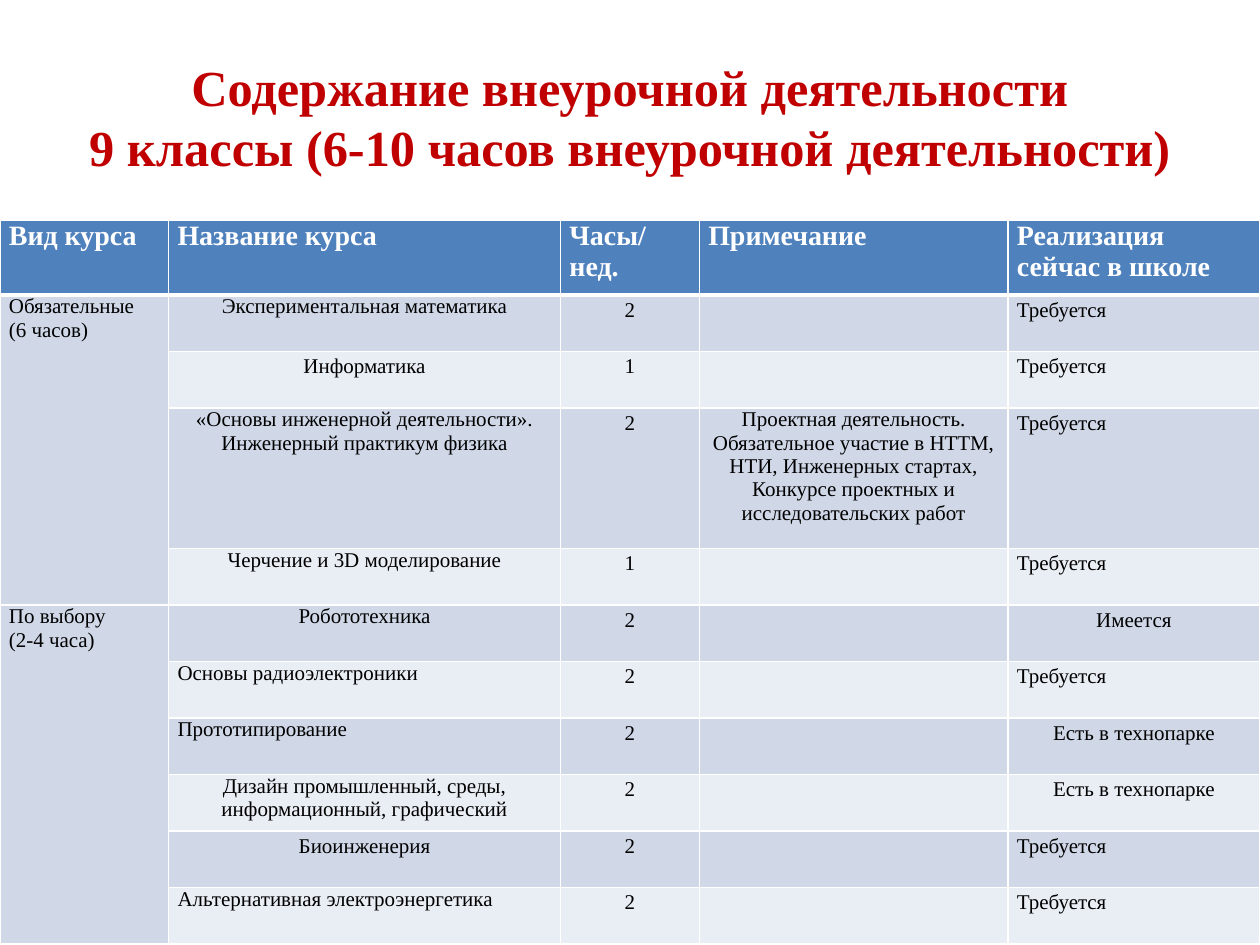
import pptx
import pptx.dml.color
import pptx.enum.text
import pptx.oxml
import pptx.oxml.ns
import pptx.util

Cm, Pt = pptx.util.Cm, pptx.util.Pt
LEFT = pptx.enum.text.PP_ALIGN.LEFT
CENTER = pptx.enum.text.PP_ALIGN.CENTER
MIDDLE = pptx.enum.text.MSO_ANCHOR.MIDDLE

HEADER_FILL, BANDS = "4F81BD", ("D0D8E8", "E9EDF4")
WIDTHS = (3.4, 7.9, 2.8, 6.22, 5.08)
HEADER_HEIGHT, ROW_HEIGHT, TALL_ROW_HEIGHT = 1.5, 1.14, 2.83
TALL_ROW = 3
LOOSE = 1.15

HEADERS = ("Вид курса", "Название курса", "Часы/нед.", "Примечание",
           "Реализация сейчас в школе")
NOTE = ("Проектная деятельность. Обязательное участие в НТТМ, НТИ, Инженерных "
        "стартах, Конкурсе проектных и исследовательских работ")
NEEDED, PRESENT, ELSEWHERE = "Требуется", "Имеется", "Есть в технопарке"

# Each course: name, alignment, line spacing, hours, note, status
GROUPS = (
    ("Обязательные\n(6 часов)", (
        ("Экспериментальная математика", CENTER, 1.0, 2, "", NEEDED),
        ("Информатика", CENTER, LOOSE, 1, "", NEEDED),
        ("«Основы инженерной деятельности». Инженерный практикум физика",
         CENTER, 1.0, 2, NOTE, NEEDED),
        ("Черчение и 3D моделирование", CENTER, 1.0, 1, "", NEEDED),
    )),
    ("По выбору\n(2-4 часа)", (
        ("Робототехника", CENTER, 1.0, 2, "", PRESENT),
        ("Основы радиоэлектроники", LEFT, 1.0, 2, "", NEEDED),
        ("Прототипирование", LEFT, 1.0, 2, "", ELSEWHERE),
        ("Дизайн промышленный, среды, информационный, графический",
         CENTER, 1.0, 2, "", ELSEWHERE),
        ("Биоинженерия", CENTER, LOOSE, 2, "", NEEDED),
        ("Альтернативная электроэнергетика", LEFT, 1.0, 2, "", NEEDED),
    )),
)


def colour(value):
    return pptx.dml.color.RGBColor.from_string(value)


def set_all(target, values):
    for name, value in values.items():
        setattr(target, name, value)


def format_text(frame, size, ink, bold=False, align=LEFT, spacing=1.0):
    for para in frame.paragraphs:
        set_all(para, {"alignment": align, "line_spacing": spacing})
        for span in para.runs:
            set_all(span.font, {"name": "Times New Roman", "size": Pt(size),
                                "bold": bold})
            span.font.color.rgb = colour(ink)


def set_borders(cell, top, bottom):
    properties = cell._tc.get_or_add_tcPr()
    for side, width in (("L", 1), ("R", 1), ("T", top), ("B", bottom)):
        properties.append(pptx.oxml.parse_xml(
            f'<a:ln{side} {pptx.oxml.ns.nsdecls("a")} w="{Pt(width)}">'
            f'<a:solidFill><a:srgbClr val="FFFFFF"/></a:solidFill></a:ln{side}>'))


def write_cell(cell, text, **style):
    cell.text = text
    set_all(cell, {"margin_left": Cm(0.18), "margin_right": Cm(0.18),
                   "margin_top": 0, "margin_bottom": 0})
    format_text(cell.text_frame, **style)


def place_title(page, left, top, width, height):
    title = page.shapes.title
    set_all(title, {"left": Cm(left), "top": Cm(top),
                    "width": Cm(width), "height": Cm(height)})
    frame = title.text_frame
    set_all(frame, {"vertical_anchor": MIDDLE, "word_wrap": True})
    frame.paragraphs[0].text = ("Содержание внеурочной деятельности\v"
                                "9 классы (6-10 часов внеурочной деятельности)")
    format_text(frame, 28.8, "C00000", bold=True, align=CENTER)


def place_courses(page, left, top, width, height):
    row_count = 1 + sum(len(courses) for _, courses in GROUPS)
    table = page.shapes.add_table(row_count, len(WIDTHS), Cm(left), Cm(top),
                                  Cm(width), Cm(height)).table
    for column, column_width in zip(table.columns, WIDTHS):
        column.width = Cm(column_width)

    # Row heights, borders and banded fills
    for index, row in enumerate(table.rows):
        row.height = Cm({0: HEADER_HEIGHT, TALL_ROW: TALL_ROW_HEIGHT}
                        .get(index, ROW_HEIGHT))
        for number, cell in enumerate(row.cells):
            set_borders(cell, 3 if index == 1 else 1, 3 if index == 0 else 1)
            band = BANDS[0] if number == 0 else BANDS[(index - 1) % 2]
            cell.fill.solid()
            cell.fill.fore_color.rgb = colour(band if index else HEADER_FILL)

    # Header row
    for number, text in enumerate(HEADERS):
        write_cell(table.cell(0, number), text, size=16, ink="FFFFFF", bold=True)

    # Course groups, each under one merged first cell
    body = {"size": 12, "ink": "000000"}
    index = 1
    for kind, courses in GROUPS:
        first = table.cell(index, 0)
        first.merge(table.cell(index + len(courses) - 1, 0))
        write_cell(first, kind, **body)
        for name, align, spacing, hours, note, status in courses:
            status_align = LEFT if status == NEEDED else CENTER
            entries = ((name, align, spacing), (str(hours), CENTER, LOOSE),
                       (note, CENTER, 1.0), (status, status_align, LOOSE))
            for number, (text, side, gap) in enumerate(entries, 1):
                if text:
                    write_cell(table.cell(index, number), text, align=side,
                               spacing=gap, **body)
            index += 1


def main():
    deck = pptx.Presentation()
    set_all(deck, {"slide_width": Cm(25.4), "slide_height": Cm(19.05)})
    page = deck.slides.add_slide(deck.slide_layouts[5])
    place_title(page, 1.27, 0.76, 22.86, 3.18)
    place_courses(page, 0, 4.45, 25.4, 14.6)
    deck.save("out.pptx")


if __name__ == "__main__":
    main()
